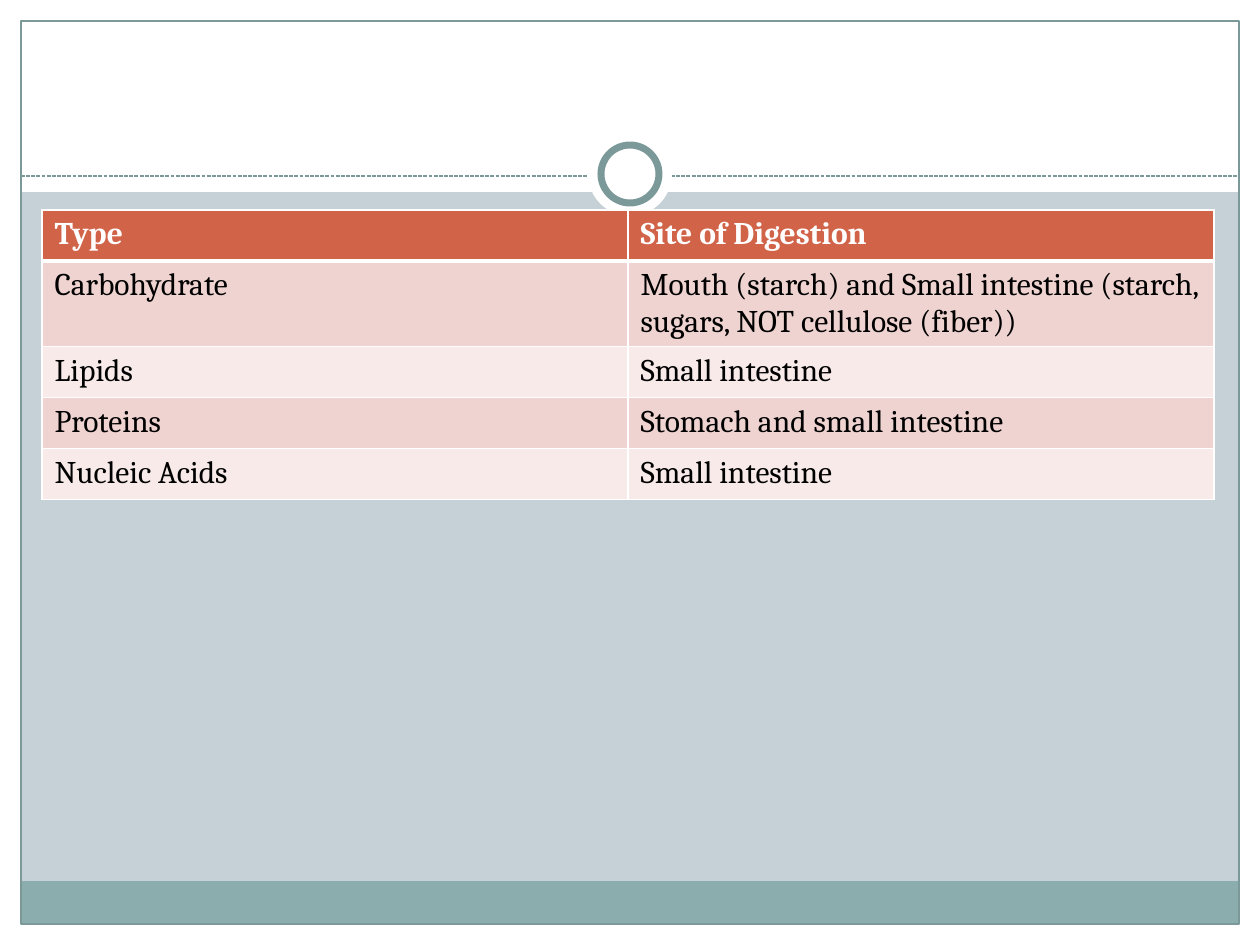
import pptx
import pptx.util
import pptx.dml.color
import pptx.enum.dml
import pptx.enum.shapes
import pptx.oxml
import pptx.oxml.ns
from lxml import etree

PX = 914400 / 126
WIDTH, HEIGHT = 1260, 945
FONT = "Cambria"
WHITE, TEAL, TEAL_BAND, BACKGROUND = "FFFFFF", "7C999A", "8CADAE", "C5D1D7"
HEADER_FILL, ROW_FILLS = "D16349", ("EED3D0", "F7EAE9")

DIGESTION = [
    ("Type", "Site of Digestion"),
    ("Carbohydrate", "Mouth (starch) and Small intestine (starch, sugars, NOT cellulose (fiber))"),
    ("Lipids", "Small intestine"),
    ("Proteins", "Stomach and small intestine"),
    ("Nucleic Acids", "Small intestine"),
]
TABLE_LEFT, TABLE_TOP, COLUMN_WIDTH, ROW_HEIGHT = 42, 210, 586, 51

MARGIN = 21
HEADER_HEIGHT, DIVIDER_Y, FOOTER_HEIGHT = 192, 176, 43
FRAME = (MARGIN, MARGIN, WIDTH - 2 * MARGIN, HEIGHT - 2 * MARGIN)
RING_CENTER = (WIDTH // 2, 174)

# kind, (left, top, width, height), fill, line colour, line points
BACKDROP = [
    ("RECTANGLE", (0, HEIGHT - MARGIN, WIDTH, MARGIN), WHITE, None, 0),
    ("RECTANGLE", (0, 0, WIDTH, HEADER_HEIGHT), WHITE, None, 0),
    ("RECTANGLE", (0, 0, MARGIN, HEIGHT), WHITE, None, 0),
    ("RECTANGLE", (WIDTH - MARGIN, 0, MARGIN, HEIGHT), WHITE, None, 0),
    ("RECTANGLE", (MARGIN, HEIGHT - MARGIN - FOOTER_HEIGHT, FRAME[2], FOOTER_HEIGHT),
     TEAL_BAND, None, 0),
    ("RECTANGLE", FRAME, None, TEAL, 0.75),
]
RING = [(84, None, 0), (58, TEAL, 4)]  # diameter, line colour, line points


def emu(px):
    return pptx.util.Emu(round(px * PX))


def rgb(color):
    return pptx.dml.color.RGBColor.from_string(color)


def add_shape(slide, kind, box, fill, line, points):
    shape = slide.shapes.add_shape(
        pptx.enum.shapes.MSO_SHAPE[kind], *(emu(value) for value in box))
    shape.shadow.inherit = False
    if fill:
        shape.fill.solid()
        shape.fill.fore_color.rgb = rgb(fill)
    else:
        shape.fill.background()
    if line:
        shape.line.color.rgb = rgb(line)
        shape.line.width = pptx.util.Pt(points)
    else:
        shape.line.fill.background()


def add_divider(slide):
    divider = slide.shapes.add_connector(
        pptx.enum.shapes.MSO_CONNECTOR.STRAIGHT,
        emu(MARGIN), emu(DIVIDER_Y), emu(WIDTH - MARGIN), emu(DIVIDER_Y))
    divider.line.color.rgb = rgb(TEAL)
    divider.line.width = pptx.util.Pt(0.75)
    divider.line.dash_style = pptx.enum.dml.MSO_LINE.SQUARE_DOT
    properties = divider.line._get_or_add_ln()
    properties.find(pptx.oxml.ns.qn("a:prstDash")).set("val", "sysDash")
    etree.SubElement(properties.getparent(), pptx.oxml.ns.qn("a:effectLst"))


def set_borders(cell, **points):
    """Draw white borders; call before the fill, which must follow them in the XML."""
    properties = cell._tc.get_or_add_tcPr()
    for side in "LRTB":
        border = etree.SubElement(properties, pptx.oxml.ns.qn(f"a:ln{side}"),
                                  w=str(pptx.util.Pt(points.get(side, 1))))
        fill = etree.SubElement(border, pptx.oxml.ns.qn("a:solidFill"))
        etree.SubElement(fill, pptx.oxml.ns.qn("a:srgbClr"), val=WHITE)


def add_digestion_table(slide):
    rows, columns = len(DIGESTION), len(DIGESTION[0])
    table = slide.shapes.add_table(
        rows, columns, emu(TABLE_LEFT), emu(TABLE_TOP),
        emu(columns * COLUMN_WIDTH), emu(rows * ROW_HEIGHT)).table
    for column in table.columns:
        column.width = emu(COLUMN_WIDTH)
    for r, texts in enumerate(DIGESTION):
        table.rows[r].height = emu(ROW_HEIGHT)
        is_header = r == 0
        for c, text in enumerate(texts):
            cell = table.cell(r, c)
            set_borders(cell, T=3 if r == 1 else 1, B=3 if is_header else 1)
            cell.fill.solid()
            cell.fill.fore_color.rgb = rgb(HEADER_FILL if is_header else ROW_FILLS[(r - 1) % 2])
            cell.text_frame.text = text
            font = cell.text_frame.paragraphs[0].runs[0].font
            font.name, font.size, font.bold = FONT, pptx.util.Pt(18), is_header
            font.color.rgb = rgb(WHITE if is_header else "000000")


def main():
    deck = pptx.Presentation()
    deck.slide_width, deck.slide_height = emu(WIDTH), emu(HEIGHT)
    slide = deck.slides.add_slide(deck.slide_layouts[6])
    slide.background.fill.solid()
    slide.background.fill.fore_color.rgb = rgb(BACKGROUND)
    for part in BACKDROP:
        add_shape(slide, *part)
    add_divider(slide)
    for diameter, line, points in RING:
        left, top = (center - diameter / 2 for center in RING_CENTER)
        add_shape(slide, "OVAL", (left, top, diameter, diameter), WHITE, line, points)
    add_digestion_table(slide)
    deck.save("out.pptx")


if __name__ == "__main__":
    main()
